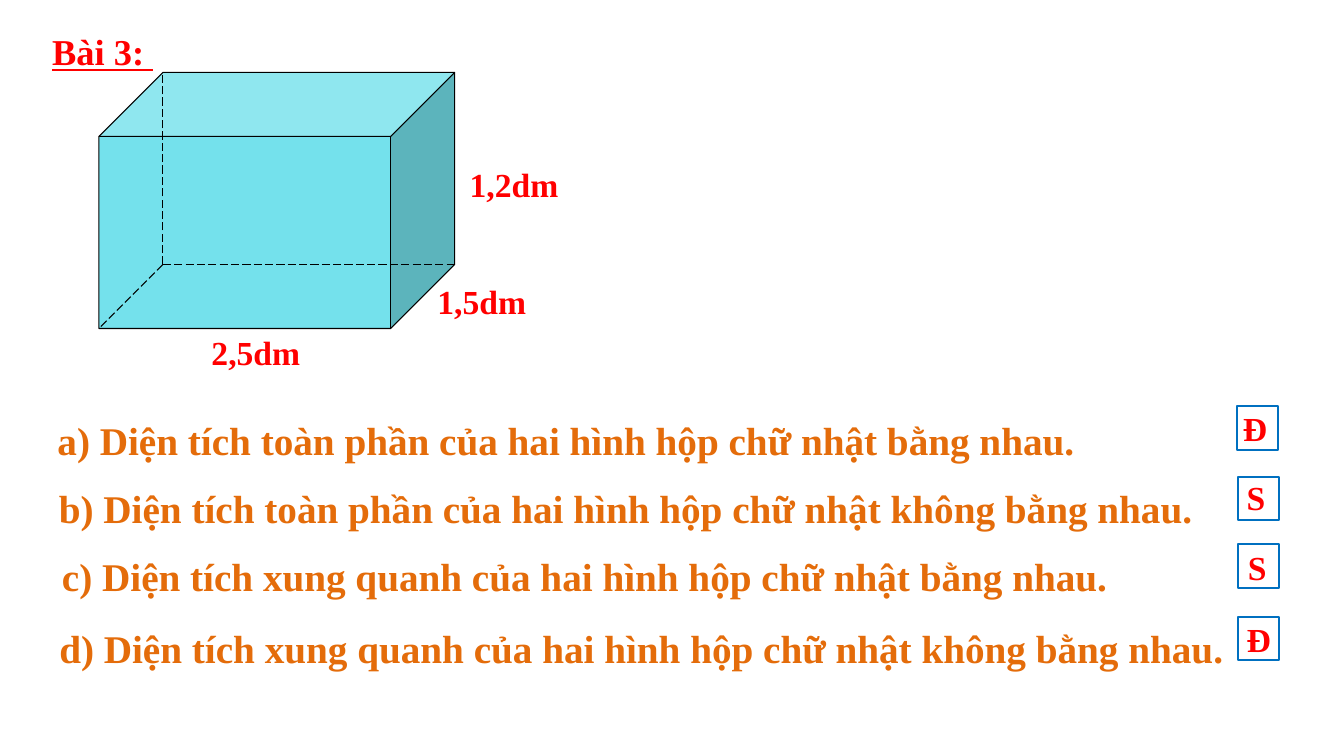
import pptx
import pptx.util
import pptx.dml.color
import pptx.enum.dml
import pptx.enum.shapes
import pptx.enum.text
import pptx.oxml.ns
import lxml.etree

Pt = pptx.util.Pt
Kind = pptx.enum.shapes.MSO_SHAPE
Align = pptx.enum.text.PP_ALIGN

HUES = {"red": "FF0000", "orange": "E46C0A", "blue": "0070C0",
        "cube": "74E1EC", "black": "000000"}

TITLE = ("Bài 3: ", 30.2, 17.3, 696, 38)
SIZES = [
    ("2,5dm", 144, 233.3, 86, 36),
    ("1,5dm", 305.3, 197.3, 84, 36),
    ("1,2dm", 328.3, 113.8, 84, 36),
]
CUBE = (70.6, 51.8, 254.2, 182.9)
DEPTH = 0.25

ROWS = [
    ("a) Diện tích toàn phần của hai hình hộp chữ nhật bằng nhau.",
     34, 293.8, 883.4, 290.2, "Đ", 880.6, 288),
    ("b) Diện tích toàn phần của hai hình hộp chữ nhật không bằng nhau.",
     35, 342.7, 884.2, 340.6, "S", 883.4, 337),
    ("c) Diện tích xung quanh của hai hình hộp chữ nhật bằng nhau.",
     37.2, 391, 884.2, 388.8, "S", 884.2, 387.4),
    ("d) Diện tích xung quanh của hai hình hộp chữ nhật không bằng nhau.",
     35.3, 442.1, 884.2, 440.6, "Đ", 883.4, 438.5),
]
BOX = (29.5, 31)
FONT = {"name": "Times New Roman", "bold": True}


def tint(name):
    return pptx.dml.color.RGBColor.from_string(HUES[name])


def write(slide, text, left, top, width, height, size, hue="red",
          align=Align.LEFT, **extra):
    box = slide.shapes.add_textbox(Pt(left), Pt(top), Pt(width), Pt(height))
    box.text_frame.word_wrap = True
    para = box.text_frame.paragraphs[0]
    para.alignment = align
    run = para.add_run()
    run.text = text
    for key, value in {**FONT, "size": Pt(size), **extra}.items():
        setattr(run.font, key, value)
    run.font.color.rgb = tint(hue)


def draw(slide, kind, left, top, width, height, fill, line, weight):
    shape = slide.shapes.add_shape(kind, Pt(left), Pt(top), Pt(width), Pt(height))
    shape.shadow.inherit = False
    if fill:
        shape.fill.solid()
        shape.fill.fore_color.rgb = tint(fill)
    else:
        shape.fill.background()
    shape.line.color.rgb = tint(line)
    shape.line.width = Pt(weight)
    return shape


def dash(slide, start, end):
    edge = slide.shapes.add_connector(
        pptx.enum.shapes.MSO_CONNECTOR.STRAIGHT, *map(Pt, start + end))
    edge.line.color.rgb = tint("black")
    edge.line.width = Pt(0.75)
    edge.line.dash_style = pptx.enum.dml.MSO_LINE.LONG_DASH
    lxml.etree.SubElement(edge.element.spPr, pptx.oxml.ns.qn("a:effectLst"))


def main():
    deck = pptx.Presentation()
    deck.slide_width, deck.slide_height = Pt(960), Pt(540)
    slide = deck.slides.add_slide(deck.slide_layouts[6])

    write(slide, *TITLE, 26, align=Align.JUSTIFY, underline=True)

    cube = draw(slide, Kind.CUBE, *CUBE, "cube", "black", 0.75)
    cube.adjustments[0] = DEPTH
    left, top, width, height = CUBE
    right, base = left + width, top + height
    skew = DEPTH * height
    back = (left + skew, base - skew)
    for end in [(left, base), (left + skew, top), (right, base - skew)]:
        dash(slide, back, end)
    for label in SIZES:
        write(slide, *label, 24)

    for text, x, y, box_x, box_y, mark, mark_x, mark_y in ROWS:
        write(slide, text, x, y, 900, 41, 28, "orange")
        draw(slide, Kind.RECTANGLE, box_x, box_y, *BOX, None, "blue", 1.5)
        write(slide, mark, mark_x, mark_y, 29, 36, 24)

    deck.save("out.pptx")


if __name__ == "__main__":
    main()
